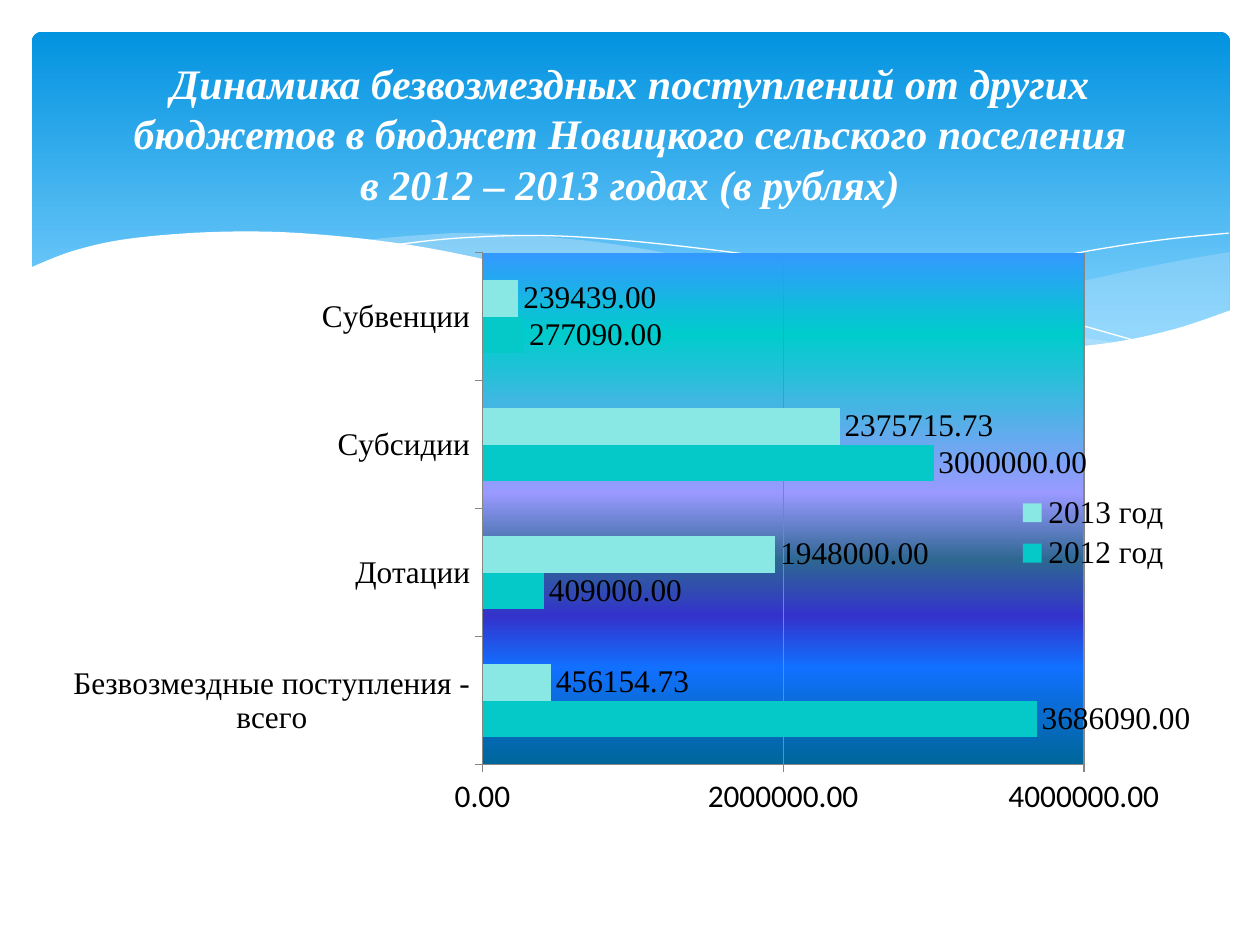
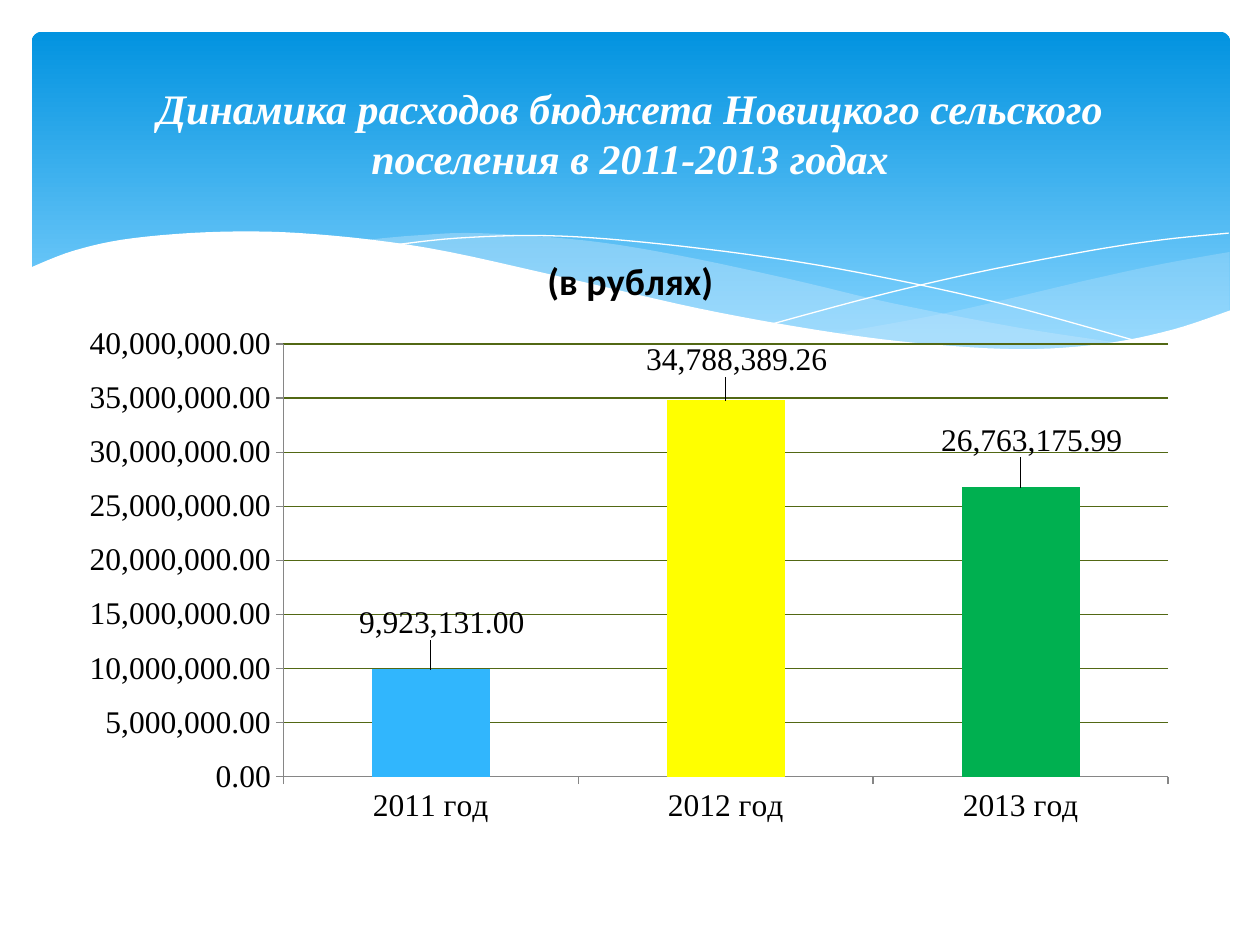
"""Build two slides on the budget of a rural settlement, each with one chart."""
from dataclasses import dataclass
from typing import Optional

from lxml import etree
from pptx import Presentation
from pptx.chart.chart import Chart
from pptx.chart.data import CategoryChartData
from pptx.dml.color import RGBColor
from pptx.enum.chart import XL_CHART_TYPE, XL_LABEL_POSITION, XL_LEGEND_POSITION, XL_TICK_MARK
from pptx.enum.shapes import MSO_SHAPE
from pptx.enum.text import MSO_ANCHOR, MSO_AUTO_SIZE, PP_ALIGN
from pptx.oxml import parse_xml
from pptx.oxml.ns import nsdecls, qn
from pptx.slide import Slide, SlideLayout
from pptx.text.text import Font
from pptx.util import Cm, Pt

BAR, COLUMN = XL_CHART_TYPE.BAR_CLUSTERED, XL_CHART_TYPE.COLUMN_CLUSTERED
OUTSIDE_END = XL_LABEL_POSITION.OUTSIDE_END
LEGEND_RIGHT = XL_LEGEND_POSITION.RIGHT
TICK_OUT = XL_TICK_MARK.OUTSIDE
ROUND_RECT = MSO_SHAPE.ROUNDED_RECTANGLE
MIDDLE, NO_AUTOFIT, CENTER = MSO_ANCHOR.MIDDLE, MSO_AUTO_SIZE.NONE, PP_ALIGN.CENTER

WHITE = RGBColor(0xFF, 0xFF, 0xFF)
BLACK = RGBColor(0x00, 0x00, 0x00)
GREY = RGBColor(0x86, 0x86, 0x86)
OLIVE = RGBColor(0x52, 0x68, 0x14)
MIST = RGBColor(0xC6, 0xE7, 0xFC)
TEAL = RGBColor(0x05, 0xC8, 0xC8)
AQUA = RGBColor(0x8A, 0xE8, 0xE4)
SKY = RGBColor(0x31, 0xB6, 0xFD)
YELLOW = RGBColor(0xFF, 0xFF, 0x00)
GREEN = RGBColor(0x00, 0xB0, 0x50)

SERIF, SANS = "Times New Roman", "Calibri"
BAND_STOPS = ((0, RGBColor(0x02, 0x93, 0xE0)), (90, RGBColor(0x83, 0xD3, 0xFE)))
PLOT_STOPS = (
    (0, RGBColor(0x33, 0x99, 0xFF)), (16, RGBColor(0x00, 0xCC, 0xCC)),
    (47, RGBColor(0x99, 0x99, 0xFF)), (60, RGBColor(0x2E, 0x67, 0x92)),
    (71, RGBColor(0x33, 0x33, 0xCC)), (81, RGBColor(0x11, 0x70, 0xFF)),
    (100, RGBColor(0x00, 0x66, 0x99)),
)

Points = tuple[tuple[float, float], ...]


@dataclass(frozen=True)
class Wave:
    """Smooth curves joined end to end, in centimetres: filled, or a hairline."""
    curves: tuple[Points, ...]
    fill: Optional[RGBColor] = None
    alpha: int = 100


@dataclass(frozen=True)
class ChartSpec:
    """What sets one chart apart from the other."""
    kind: XL_CHART_TYPE
    categories: tuple[str, ...]
    series: tuple[tuple[str, tuple[float, ...], RGBColor], ...]
    number_format: str
    top_value: int
    step: int
    value_font: str
    grid: RGBColor
    plot: tuple[float, float, float, float]
    plot_stops: tuple = ()
    title: str = ""
    point_colors: tuple[RGBColor, ...] = ()
    label_shifts: Points = ()


WAVES = (
    Wave((
        ((24.79, 5.08), (23.39, 5.33), (21.87, 5.66), (19.13, 6.3), (16.79, 6.73)),
        ((16.79, 6.73), (18.26, 6.91), (19.53, 7.04), (20.68, 7.06), (21.92, 6.99),
         (23.19, 6.78), (24.79, 6.27)),
    ), MIST, 29),
    Wave((
        ((22.68, 6.93), (20.5, 6.6), (17.93, 6.1), (15.98, 5.64), (13.74, 5.16),
         (11.81, 4.85), (9.65, 4.7), (8.33, 4.75), (7.26, 4.85)),
        ((7.26, 4.85), (9.19, 5.16), (11.4, 5.64), (14.38, 6.3), (16.51, 6.71),
         (18.34, 6.96), (20.22, 7.06), (21.54, 7.04), (22.68, 6.93)),
    ), MIST, 40),
    Wave((((7.85, 4.95), (9.22, 4.8), (11, 4.75), (12.95, 4.88), (15.44, 5.18),
           (17.65, 5.56), (20.19, 6.12), (23.04, 6.91)),)),
    Wave((((15.57, 6.53), (17.65, 5.97), (19.71, 5.49), (22, 5.05), (23.47, 4.83),
           (24.77, 4.7)),)),
    Wave((
        ((0.58, 5.41), (1.5, 5.05), (2.69, 4.8), (4.5, 4.67), (6.35, 4.72), (8.64, 5),
         (11.35, 5.59), (14.1, 6.22), (16.46, 6.65), (18.44, 6.91), (20.55, 7.04),
         (22.23, 6.93), (23.62, 6.65), (24.82, 6.25)),
        ((24.82, 8.36), (0.58, 8.36)),
    ), WHITE),
)

TRANSFERS = ChartSpec(
    kind=BAR,
    categories=("Безвозмездные поступления - всего", "Дотации", "Субсидии", "Субвенции"),
    series=(("2012 год", (3686090, 409000, 3000000, 277090), TEAL),
            ("2013 год", (456154.73, 1948000, 2375715.73, 239439), AQUA)),
    number_format="0.00", top_value=4000000, step=2000000, value_font=SANS, grid=GREY,
    plot=(0.37, 0.04, 0.54, 0.84), plot_stops=PLOT_STOPS,
)
EXPENSES = ChartSpec(
    kind=COLUMN,
    categories=("2011 год", "2012 год", "2013 год"),
    series=(("Расходы", (9923131, 34788389.26, 26763175.99), SKY),),
    number_format="#,##0.00", top_value=40000000, step=5000000, value_font=SERIF, grid=OLIVE,
    plot=(0.19, 0.19, 0.79, 0.71), title="(в рублях)",
    point_colors=(SKY, YELLOW, GREEN),
    label_shifts=((0.01, -0.04), (0.01, -0.03), (0.01, -0.04)),
)
SLIDES = (
    (("Динамика безвозмездных поступлений от других бюджетов в бюджет "
      "Новицкого сельского поселения", "в 2012 – 2013 годах (в рублях)"), TRANSFERS),
    (("Динамика расходов бюджета Новицкого сельского поселения в 2011-2013 годах",), EXPENSES),
)


def smooth(knots: Points, steps: int = 6) -> list[tuple[float, float]]:
    """Return points of a Catmull-Rom curve through the knots."""
    if len(knots) < 3:
        return list(knots)
    padded = (knots[0], *knots, knots[-1])
    points = [knots[0]]
    for a, b, c, d in zip(padded, padded[1:], padded[2:], padded[3:]):
        for t in (i / steps for i in range(1, steps + 1)):
            points.append(tuple(
                (2 * q + (r - p) * t + (2 * p - 5 * q + 4 * r - u) * t ** 2
                 + (3 * q - p - 3 * r + u) * t ** 3) / 2
                for p, q, r, u in zip(a, b, c, d)))
    return points


def gradient_xml(stops: tuple) -> str:
    """Return a top-to-bottom gradient fill."""
    marks = "".join(f'<a:gs pos="{pos * 1000}"><a:srgbClr val="{color}"/></a:gs>'
                    for pos, color in stops)
    return (f'<a:gradFill {nsdecls("a")} rotWithShape="1"><a:gsLst>{marks}</a:gsLst>'
            '<a:lin ang="5400000" scaled="0"/></a:gradFill>')


def chart_area_fill(fill: str):
    """Return chart shape properties with the given fill and no line."""
    return parse_xml(f'<c:spPr {nsdecls("c", "a")}>{fill}<a:ln><a:noFill/></a:ln></c:spPr>')


def manual_layout(modes: str, **fractions: float):
    """Return a chart layout element with the given fractions."""
    values = "".join(f'<c:{key} val="{value}"/>' for key, value in fractions.items())
    return parse_xml(f'<c:layout {nsdecls("c")}><c:manualLayout>{modes}{values}'
                     '</c:manualLayout></c:layout>')


def draw_band(s: Slide):
    """Draw the rounded gradient band."""
    sp = s.shapes.add_shape(ROUND_RECT, Cm(0.64), Cm(0.64), Cm(24.16), Cm(6.86))
    sp.adjustments[0] = 0.03
    sp.fill.solid()
    props = sp._element.spPr
    props.replace(props.find(qn("a:solidFill")), parse_xml(gradient_xml(BAND_STOPS)))
    sp.line.fill.background()
    return sp


def draw_wave(s: Slide, wave: Wave):
    """Draw one wave."""
    points = [(Cm(x), Cm(y)) for curve in wave.curves for x, y in smooth(curve)]
    builder = s.shapes.build_freeform(*points[0])
    builder.add_line_segments(points[1:], close=wave.fill is not None)
    sp = builder.convert_to_shape()
    if wave.fill is None:
        sp.fill.background()
        sp.line.color.rgb = WHITE
        sp.line.width = Pt(0)
        return sp
    sp.fill.solid()
    sp.fill.fore_color.rgb = wave.fill
    sp.line.fill.background()
    if wave.alpha < 100:
        color = sp._element.spPr.find(qn("a:solidFill"))[0]
        etree.SubElement(color, qn("a:alpha")).set("val", str(wave.alpha * 1000))
    return sp


def move_to_layout(layout: SlideLayout, shapes: list) -> None:
    """Put the shapes behind everything else on the layout."""
    for i, sp in enumerate(shapes):
        sp.shadow.inherit = False
        sp._element.nvSpPr.cNvPr.set("id", str(100 + i))
        layout.shapes._spTree.insert(2 + i, sp._element)


def set_title(s: Slide, lines: tuple[str, ...]) -> None:
    """Fill and format the title placeholder."""
    title = s.shapes.title
    title.left, title.top, title.width, title.height = Cm(1.27), Cm(0.94), Cm(22.86), Cm(3.48)
    tf = title.text_frame
    tf.word_wrap, tf.auto_size, tf.vertical_anchor = True, NO_AUTOFIT, MIDDLE
    p = tf.paragraphs[0]
    p.alignment = CENTER
    for i, line in enumerate(lines):
        if i:
            p.add_line_break()
        p.add_run().text = line
    set_font(p.font, SERIF, 24, WHITE)
    p.font.bold = p.font.italic = True


def set_font(font: Font, name: str, size: float = 18, color: RGBColor = BLACK) -> None:
    """Set name, size and colour of a font."""
    font.name, font.size = name, Pt(size)
    font.color.rgb = color


def format_axes(chart: Chart, spec: ChartSpec) -> None:
    """Format both axes and the gridlines."""
    for axis, name in ((chart.category_axis, SERIF), (chart.value_axis, spec.value_font)):
        axis.major_tick_mark = TICK_OUT
        axis.format.line.color.rgb = GREY
        set_font(axis.tick_labels.font, name)
    axis = chart.value_axis
    axis.minimum_scale, axis.maximum_scale, axis.major_unit = 0, spec.top_value, spec.step
    axis.tick_labels.number_format = spec.number_format
    axis.tick_labels.number_format_is_linked = False
    axis.has_major_gridlines = True
    axis.major_gridlines.format.line.color.rgb = spec.grid
    axis.major_gridlines.format.line.width = Pt(0.75)


def format_series(chart: Chart, spec: ChartSpec) -> None:
    """Colour the bars and place their labels."""
    for series, (_, _, color) in zip(chart.plots[0].series, spec.series):
        series.invert_if_negative = False
        series.format.fill.solid()
        series.format.fill.fore_color.rgb = color
        labels = series.data_labels
        labels.show_value = True
        labels.number_format, labels.number_format_is_linked = spec.number_format, False
        labels.position = OUTSIDE_END
        set_font(labels.font, SERIF)
        for i, color in enumerate(spec.point_colors):
            fill = series.points[i].format.fill
            fill.solid()
            fill.fore_color.rgb = color
        for i, (dx, dy) in enumerate(spec.label_shifts):
            label = series.points[i].data_label
            set_font(label.font, SERIF)
            label.position = OUTSIDE_END
            element = labels._element.findall(qn("c:dLbl"))[i]
            element.find(qn("c:idx")).addnext(manual_layout("", x=dx, y=dy))


def add_budget_chart(s: Slide, spec: ChartSpec) -> None:
    """Add a chart to the slide."""
    data = CategoryChartData(number_format=spec.number_format)
    data.categories = spec.categories
    for name, values, _ in spec.series:
        data.add_series(name, values)
    chart = s.shapes.add_chart(spec.kind, Cm(1.42), Cm(4.6), Cm(22.58), Cm(12.29), data).chart
    set_font(chart.font, SANS)
    chart.plots[0].gap_width = 150
    chart.plots[0].vary_by_categories = False
    chart.has_title = bool(spec.title)
    if spec.title:
        p = chart.chart_title.text_frame.paragraphs[0]
        p.add_run().text = spec.title
        set_font(p.font, SANS, 21.6)
        p.font.bold = True
    chart.has_legend = len(spec.series) > 1
    if chart.has_legend:
        chart.legend.position = LEGEND_RIGHT
        set_font(chart.legend.font, SERIF)
    format_axes(chart, spec)
    format_series(chart, spec)

    chart_space = chart._chartSpace
    chart_space.find(qn("c:chart")).addnext(chart_area_fill("<a:noFill/>"))
    area = chart_space.find(f'{qn("c:chart")}/{qn("c:plotArea")}')
    for old in area.findall(qn("c:layout")):
        area.remove(old)
    modes = '<c:layoutTarget val="inner"/><c:xMode val="edge"/><c:yMode val="edge"/>'
    area.insert(0, manual_layout(modes, **dict(zip("xywh", spec.plot))))
    area.append(chart_area_fill(gradient_xml(spec.plot_stops) if spec.plot_stops
                                else "<a:noFill/>"))


def main() -> None:
    """Build and save the presentation."""
    prs = Presentation()
    prs.slide_width, prs.slide_height = Cm(25.4), Cm(19.05)
    layout = prs.slide_layouts[5]
    slides = [prs.slides.add_slide(layout) for _ in SLIDES]
    move_to_layout(layout, [draw_band(slides[0]), *(draw_wave(slides[0], w) for w in WAVES)])
    for s, (lines, spec) in zip(slides, SLIDES):
        set_title(s, lines)
        add_budget_chart(s, spec)
    prs.save("out.pptx")


if __name__ == "__main__":
    main()
